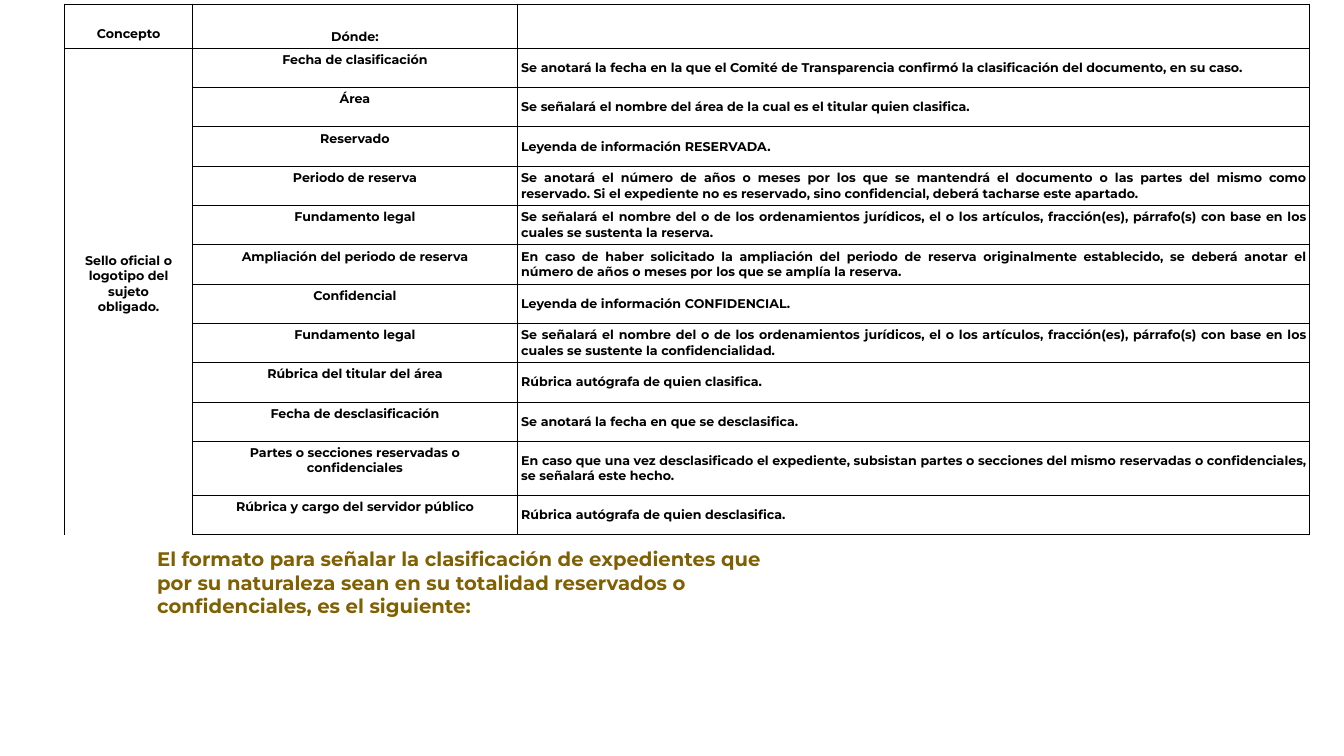
from pptx import Presentation
from pptx.dml.color import RGBColor
from pptx.enum.text import MSO_ANCHOR as Anchor, MSO_AUTO_SIZE as AutoSize, PP_ALIGN as Align
from pptx.oxml import parse_xml
from pptx.oxml.ns import nsdecls
from pptx.util import Inches, Pt

BLACK = RGBColor(0x00, 0x00, 0x00)
WHITE = RGBColor(0xFF, 0xFF, 0xFF)
GOLD = RGBColor(0x80, 0x60, 0x00)
FONT = "Montserrat"

COLUMN_WIDTHS = (1.27, 3.22, 7.86)
HEADER_HEIGHT = 0.44
LINE_HEIGHT = 0.15
ROW_HEIGHT = 0.39
MARGIN = 0.04

SEAL = "Sello oficial o\nlogotipo del\nsujeto\nobligado."
FIELDS = [
    ("Fecha de clasificación",
     "Se anotará la fecha en la que el Comité de Transparencia confirmó la clasificación del documento, en su caso."),
    ("Área",
     "Se señalará el nombre del área de la cual es el titular quien clasifica."),
    ("Reservado",
     "Leyenda de información RESERVADA."),
    ("Periodo de reserva",
     "Se anotará el número de años o meses por los que se mantendrá el documento o las partes del mismo "
     "como reservado. Si el expediente no es reservado, sino confidencial, deberá tacharse este apartado."),
    ("Fundamento legal",
     "Se señalará el nombre del o de los ordenamientos jurídicos, el o los artículos, fracción(es), "
     "párrafo(s) con base en los cuales se sustenta la reserva."),
    ("Ampliación del periodo de reserva",
     "En caso de haber solicitado la ampliación del periodo de reserva originalmente establecido, "
     "se deberá anotar el número de años o meses por los que se amplía la reserva."),
    ("Confidencial",
     "Leyenda de información CONFIDENCIAL."),
    ("Fundamento legal",
     "Se señalará el nombre del o de los ordenamientos jurídicos, el o los artículos, fracción(es), "
     "párrafo(s) con base en los cuales se sustente la confidencialidad."),
    ("Rúbrica del titular del área",
     "Rúbrica autógrafa de quien clasifica."),
    ("Fecha de desclasificación",
     "Se anotará la fecha en que se desclasifica."),
    ("Partes o secciones reservadas o\nconfidenciales",
     "En caso que una vez desclasificado el expediente, subsistan partes o secciones del mismo "
     "reservadas o confidenciales, se señalará este hecho."),
    ("Rúbrica y cargo del servidor público",
     "Rúbrica autógrafa de quien desclasifica."),
]
CAPTION = ("El formato para señalar la clasificación de expedientes que por su naturaleza sean "
           "en su totalidad reservados o confidenciales, es el siguiente:")


def write_text(frame, text, size=9, color=BLACK, align=Align.CENTER):
    """Write one bold paragraph; each newline becomes a line break."""
    para = frame.paragraphs[0]
    para.alignment = align
    for index, line in enumerate(text.split("\n")):
        if index:
            para.add_line_break()
        span = para.add_run()
        span.text = line
        span.font.name = FONT
        span.font.size = Pt(size)
        span.font.bold = True
        span.font.color.rgb = color


def set_borders(cell, sides):
    """Draw the given sides in black and leave the others without a line."""
    properties = cell._tc.get_or_add_tcPr()
    for index, side in enumerate("LRTB"):
        paint = f'<a:solidFill><a:srgbClr val="{BLACK}"/></a:solidFill>' if side in sides else "<a:noFill/>"
        properties.insert(index, parse_xml(f'<a:ln{side} {nsdecls("a")} w="{Pt(0.75)}">{paint}</a:ln{side}>'))


def format_cell(cell, text="", anchor=Anchor.MIDDLE, bottom=MARGIN, sides="LRTB", align=Align.CENTER):
    cell.margin_left = cell.margin_right = cell.margin_top = Inches(MARGIN)
    cell.margin_bottom = Inches(bottom)
    cell.vertical_anchor = anchor
    if text:
        cell.fill.solid()
        cell.fill.fore_color.rgb = WHITE
        write_text(cell.text_frame, text, align=align)
    else:
        cell.fill.background()
    set_borders(cell, sides)


def add_field_table(page, left, top):
    # Grid: a term that takes two lines makes its row one line taller
    heights = [HEADER_HEIGHT] + [ROW_HEIGHT + LINE_HEIGHT * term.count("\n") for term, _ in FIELDS]
    table = page.shapes.add_table(len(heights), len(COLUMN_WIDTHS), Inches(left), Inches(top),
                                  Inches(sum(COLUMN_WIDTHS)), Inches(sum(heights))).table
    table.first_row = table.horz_banding = False
    for column, width in zip(table.columns, COLUMN_WIDTHS):
        column.width = Inches(width)
    for row, height in zip(table.rows, heights):
        row.height = Inches(height)

    # Header row
    format_cell(table.cell(0, 0), "Concepto", anchor=Anchor.BOTTOM, bottom=0.07)
    format_cell(table.cell(0, 1), "Dónde:", anchor=Anchor.BOTTOM)
    format_cell(table.cell(0, 2))

    # Seal column, open at the bottom
    seal = table.cell(1, 0)
    seal.merge(table.cell(len(FIELDS), 0))
    format_cell(seal, SEAL, bottom=MARGIN + LINE_HEIGHT, sides="LRT")
    for row in range(2, len(heights)):
        set_borders(table.cell(row, 0), "LR")

    # Terms and their explanations
    for row, (term, explanation) in enumerate(FIELDS, start=1):
        format_cell(table.cell(row, 1), term, anchor=Anchor.TOP)
        format_cell(table.cell(row, 2), explanation, align=Align.JUSTIFY)


def add_caption(page, left, top, width, height):
    box = page.shapes.add_textbox(Inches(left), Inches(top), Inches(width), Inches(height))
    frame = box.text_frame
    frame.word_wrap = True
    frame.auto_size = AutoSize.SHAPE_TO_FIT_TEXT
    write_text(frame, CAPTION, size=14, color=GOLD, align=Align.LEFT)


def main():
    deck = Presentation()
    deck.slide_width, deck.slide_height = Inches(13.33), Inches(7.5)
    page = deck.slides.add_slide(deck.slide_layouts[6])
    add_field_table(page, 0.64, 0.04)
    add_caption(page, 1.46, 5.38, 6.32, 0.81)
    deck.save("out.pptx")


if __name__ == "__main__":
    main()
